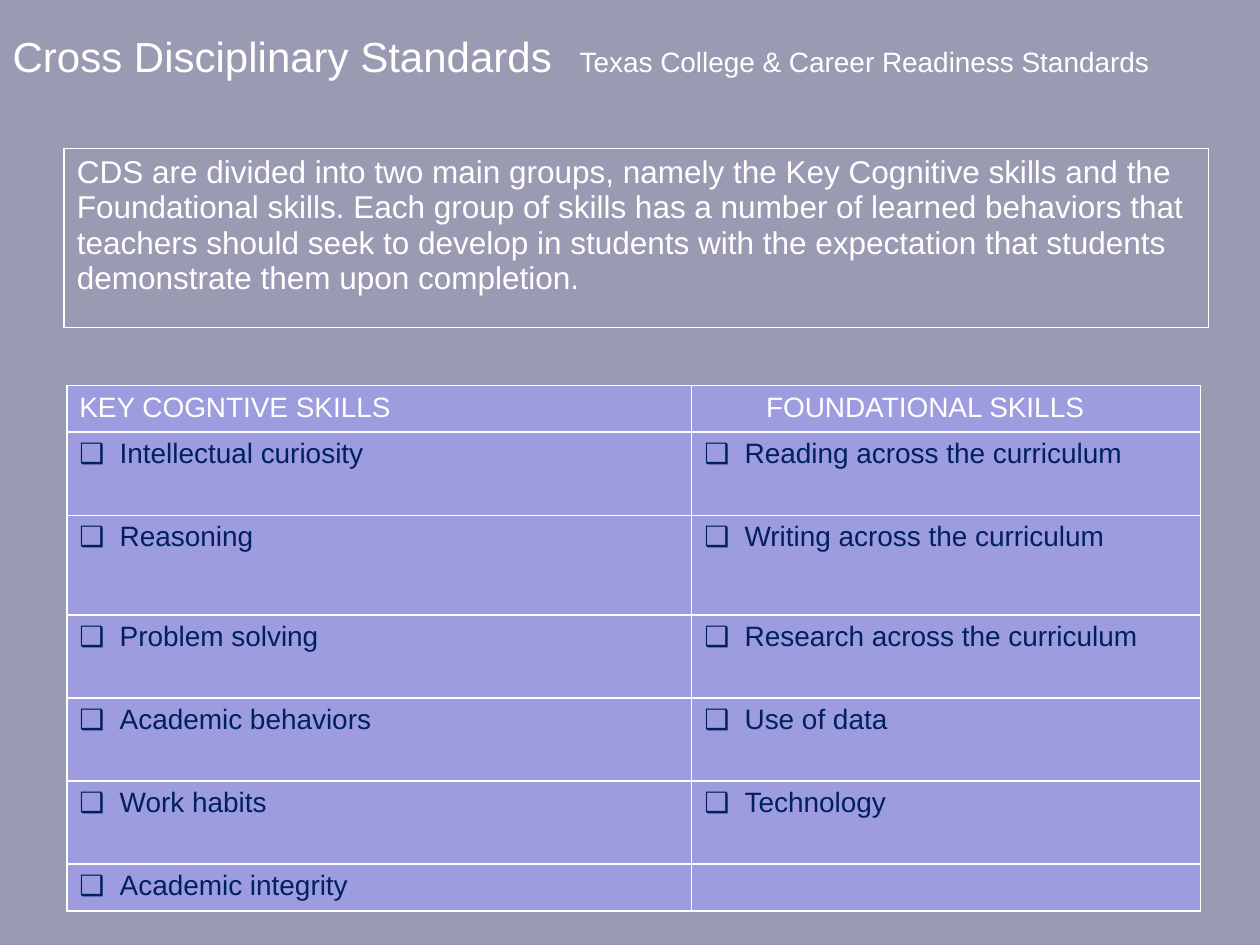
from lxml.etree import SubElement
from pptx import Presentation
from pptx.dml.color import RGBColor
from pptx.enum.text import MSO_ANCHOR, MSO_AUTO_SIZE, PP_ALIGN
from pptx.oxml.ns import qn
from pptx.util import Inches, Pt

COLORS = {"background": "9B9AB3", "cell": "9C9CDF", "light": "FFFFFF", "dark": "002060"}
FONT = "Arial"

TITLE = "Cross Disciplinary Standards"
SUBTITLE = "Texas College & Career Readiness Standards"
SUMMARY = (
    "CDS are divided into two main groups, namely the Key Cognitive skills and the "
    "Foundational skills. Each group of skills has a number of learned behaviors that "
    "teachers should seek to develop in students with the expectation that students "
    "demonstrate them upon completion."
)
HEADERS = [("KEY COGNTIVE SKILLS", 0), ("FOUNDATIONAL SKILLS", 0.49)]
SKILLS = [
    ("Intellectual curiosity", "Reading across the curriculum"),
    ("Reasoning", "Writing across the curriculum"),
    ("Problem solving", "Research across the curriculum"),
    ("Academic behaviors", "Use of data"),
    ("Work habits", "Technology"),
    ("Academic integrity", ""),
]
SKILL_COLUMNS = [4.96, 4.04]
SKILL_ROWS = [0.37, 0.66, 0.79, 0.66, 0.66, 0.66, 0.37]


def color(name):
    return RGBColor.from_string(COLORS[name])


def add_text(paragraph, text, size=16, fill="light", margin=0, hanging=0, bullet=None, tab=None):
    properties = paragraph._p.get_or_add_pPr()
    properties.set("marL", str(Inches(margin)))
    properties.set("indent", str(-Inches(hanging)))
    if bullet:
        SubElement(properties, qn("a:buFont"), typeface=FONT)
        SubElement(properties, qn("a:buChar"), char=bullet)
    if tab:
        tabs = SubElement(properties, qn("a:tabLst"))
        SubElement(tabs, qn("a:tab"), pos=str(Inches(tab)), algn="l")
    if not text:
        SubElement(paragraph._p, qn("a:endParaRPr"), sz=str(size * 100))
        return
    run = paragraph.add_run()
    run.text = text
    run.font.name = FONT
    run.font.size = Pt(size)
    run.font.color.rgb = color(fill)


def add_borders(cell, width=1):
    properties = cell._tc.get_or_add_tcPr()
    for side in ("a:lnL", "a:lnR", "a:lnT", "a:lnB"):
        line = SubElement(properties, qn(side), w=str(Pt(width)))
        SubElement(SubElement(line, qn("a:solidFill")), qn("a:srgbClr"), val=COLORS["light"])


def add_grid(slide, left, top, columns, rows, fill=None):
    size = (Inches(sum(columns)), Inches(sum(rows)))
    frame = slide.shapes.add_table(len(rows), len(columns), Inches(left), Inches(top), *size)
    table = frame.table
    table.first_row = table.horz_banding = False
    for column, width in zip(table.columns, columns):
        column.width = Inches(width)
    for row, height in zip(table.rows, rows):
        row.height = Inches(height)
    for cell in table.iter_cells():
        add_borders(cell)
        if fill:
            cell.fill.solid()
            cell.fill.fore_color.rgb = color(fill)
        else:
            cell.fill.background()
    return table


def add_title(slide):
    title = slide.shapes.title
    title.left, title.top, title.width, title.height = map(Inches, (0, 0.19, 9.79, 0.51))
    frame = title.text_frame
    frame.word_wrap = True
    frame.auto_size = MSO_AUTO_SIZE.SHAPE_TO_FIT_TEXT
    frame.vertical_anchor = MSO_ANCHOR.TOP
    paragraph = frame.paragraphs[0]
    paragraph.alignment = PP_ALIGN.LEFT
    add_text(paragraph, TITLE + "\t", size=24, tab=4.92)
    add_text(paragraph, SUBTITLE)


def main():
    presentation = Presentation()
    presentation.slide_width, presentation.slide_height = Inches(10), Inches(7.5)
    slide = presentation.slides.add_slide(presentation.slide_layouts[5])
    slide.background.fill.solid()
    slide.background.fill.fore_color.rgb = color("background")
    add_title(slide)

    skills = add_grid(slide, 0.53, 3.06, SKILL_COLUMNS, SKILL_ROWS, fill="cell")
    for column, (header, margin) in enumerate(HEADERS):
        add_text(skills.cell(0, column).text_frame.paragraphs[0], header, margin=margin)
    for row, names in enumerate(SKILLS, start=1):
        for column, name in enumerate(names):
            add_text(skills.cell(row, column).text_frame.paragraphs[0], name, fill="dark",
                     margin=0.32, hanging=0.32, bullet="❑" if name else None)

    summary = add_grid(slide, 0.51, 1.18, [9.08], [1.42])
    add_text(summary.cell(0, 0).text_frame.paragraphs[0], SUMMARY, size=18)
    presentation.save("out.pptx")


if __name__ == "__main__":
    main()
